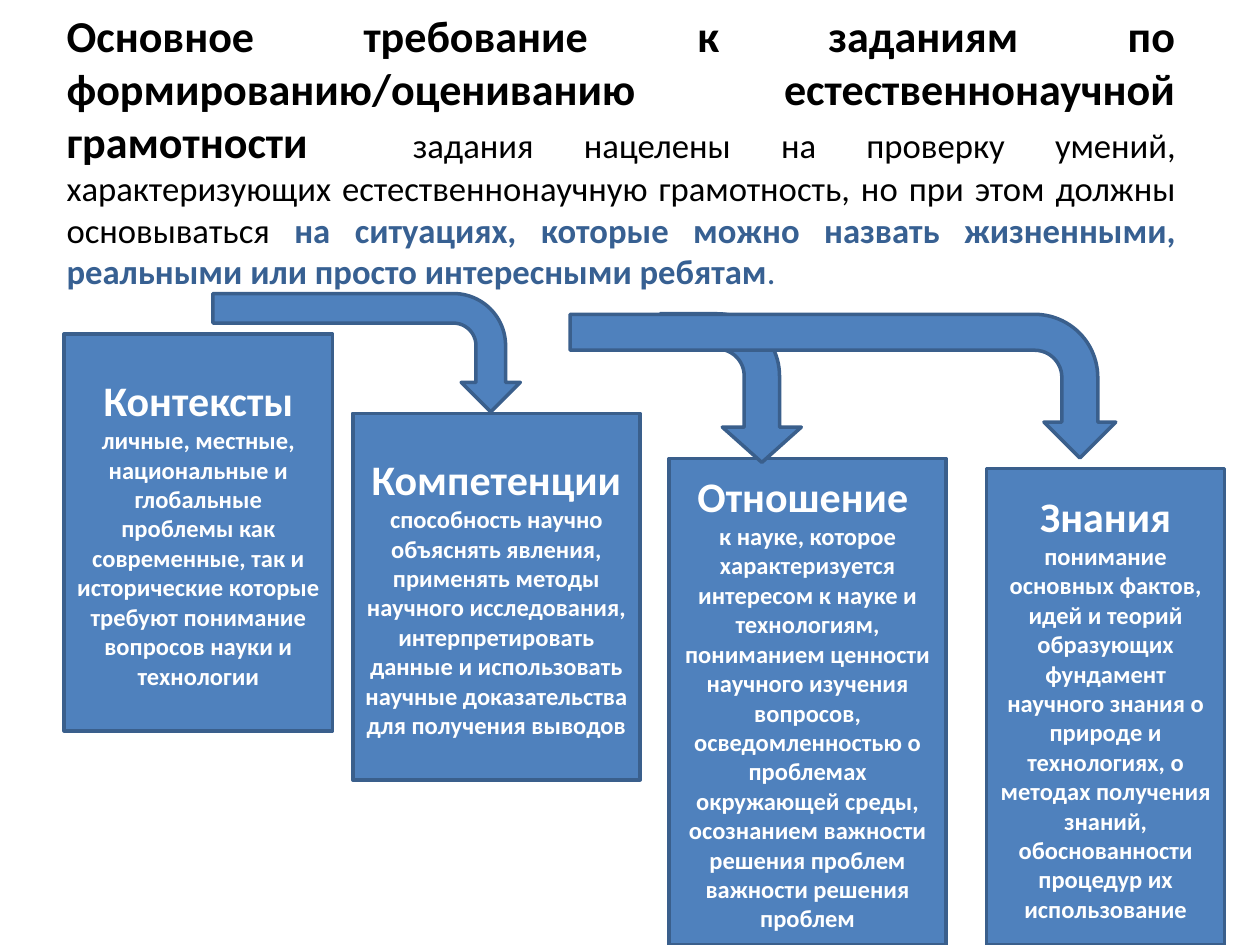
from pptx import Presentation, util as u
from pptx.dml.color import RGBColor
from pptx.enum import shapes, text

COLS, ROWS = 100, 75
CELL = u.Inches(10) // COLS
FONT = "Calibri"
COLORS = {
    "fill": "4F81BD",
    "line": "3A5F8C",
    "black": "000000",
    "accent": "376092",
    "white": "FFFFFF",
}

TITLE_RUNS = [
    ("Основное требование к заданиям по формированию/оцениванию "
     "естественнонаучной грамотности  ", 25.2, "black", True),
    ("задания нацелены на проверку умений, характеризующих естественнонаучную "
     "грамотность, но при этом должны основываться ", 19.8, "black", False),
    ("на ситуациях, которые можно назвать жизненными, реальными или просто "
     "интересными ребятам", 19.8, "accent", True),
    (".", 19.8, "accent", False),
]

CARDS = [
    ((5.1, 26.5, 21.3, 31.5), "Контексты ", False,
     "личные, местные, национальные и глобальные проблемы как современные, так и "
     "исторические которые требуют понимание вопросов науки и технологии"),
    ((28, 32.8, 22.8, 29.1), "Компетенции ", False,
     "способность научно объяснять явления, применять методы научного исследования, "
     "интерпретировать данные и использовать научные доказательства для получения "
     "выводов"),
    ((53.1, 36.4, 22, 38.6), "Отношение ", True,
     "к науке, которое характеризуется интересом к науке и технологиям, пониманием "
     "ценности научного изучения вопросов, осведомленностью о проблемах окружающей "
     "среды, осознанием важности решения проблем важности решения проблем"),
    ((78.3, 37.2, 18.9, 37.8), "Знания ", False,
     "понимание основных фактов, идей и теорий образующих фундамент научного знания "
     "о природе и технологиях, о методах получения знаний, обоснованности процедур "
     "их использование"),
]

BEND = (0.25, 0.25, 0.25, 0.44)
ARROWS = [
    ((24.4, 15.8, 9.4, 24.4), BEND),
    ((52.1, 25.2, 11.8, 11.2), (0.25, 0.28, 0.25, 0.44)),
    ((61.2, 9, 11.4, 43.3), BEND),
]


def rgb(name):
    return RGBColor.from_string(COLORS[name])


def place(box):
    return [round(n * CELL) for n in box]


def add_run(p, words, size, color, bold):
    r = p.add_run()
    r.text = words
    r.font.name = FONT
    r.font.size = u.Pt(size)
    r.font.bold = bold
    r.font.color.rgb = rgb(color)


def set_frame(tf):
    tf.word_wrap = True
    tf.vertical_anchor = text.MSO_ANCHOR.MIDDLE


def add_title(s, box):
    tf = s.shapes.add_textbox(*place(box)).text_frame
    set_frame(tf)
    p = tf.paragraphs[0]
    p.alignment = text.PP_ALIGN.JUSTIFY
    for run in TITLE_RUNS:
        add_run(p, *run)


def add_block(s, kind, box):
    sp = s.shapes.add_shape(kind, *place(box))
    sp.shadow.inherit = False
    sp.fill.solid()
    sp.fill.fore_color.rgb = rgb("fill")
    sp.line.color.rgb = rgb("line")
    sp.line.width = u.Pt(2)
    return sp


def add_card(s, box, heading, split, body):
    tf = add_block(s, shapes.MSO_SHAPE.RECTANGLE, box).text_frame
    set_frame(tf)
    p = tf.paragraphs[0]
    add_run(p, heading, 24, "white", True)
    if split:
        p = tf.add_paragraph()
    add_run(p, body, 14, "white", True)
    for p in tf.paragraphs:
        p.alignment = text.PP_ALIGN.CENTER


def add_arrow(s, box, bend):
    sp = add_block(s, shapes.MSO_SHAPE.BENT_ARROW, box)
    sp.rotation = 90
    for i, value in enumerate(bend):
        sp.adjustments[i] = value


def main():
    prs = Presentation()
    prs.slide_width = COLS * CELL
    prs.slide_height = ROWS * CELL
    s = prs.slides.add_slide(prs.slide_layouts[6])
    add_title(s, (4.3, 6, 90, 11.8))
    for card in CARDS:
        add_card(s, *card)
    for arrow in ARROWS:
        add_arrow(s, *arrow)
    prs.save("out.pptx")


if __name__ == "__main__":
    main()
